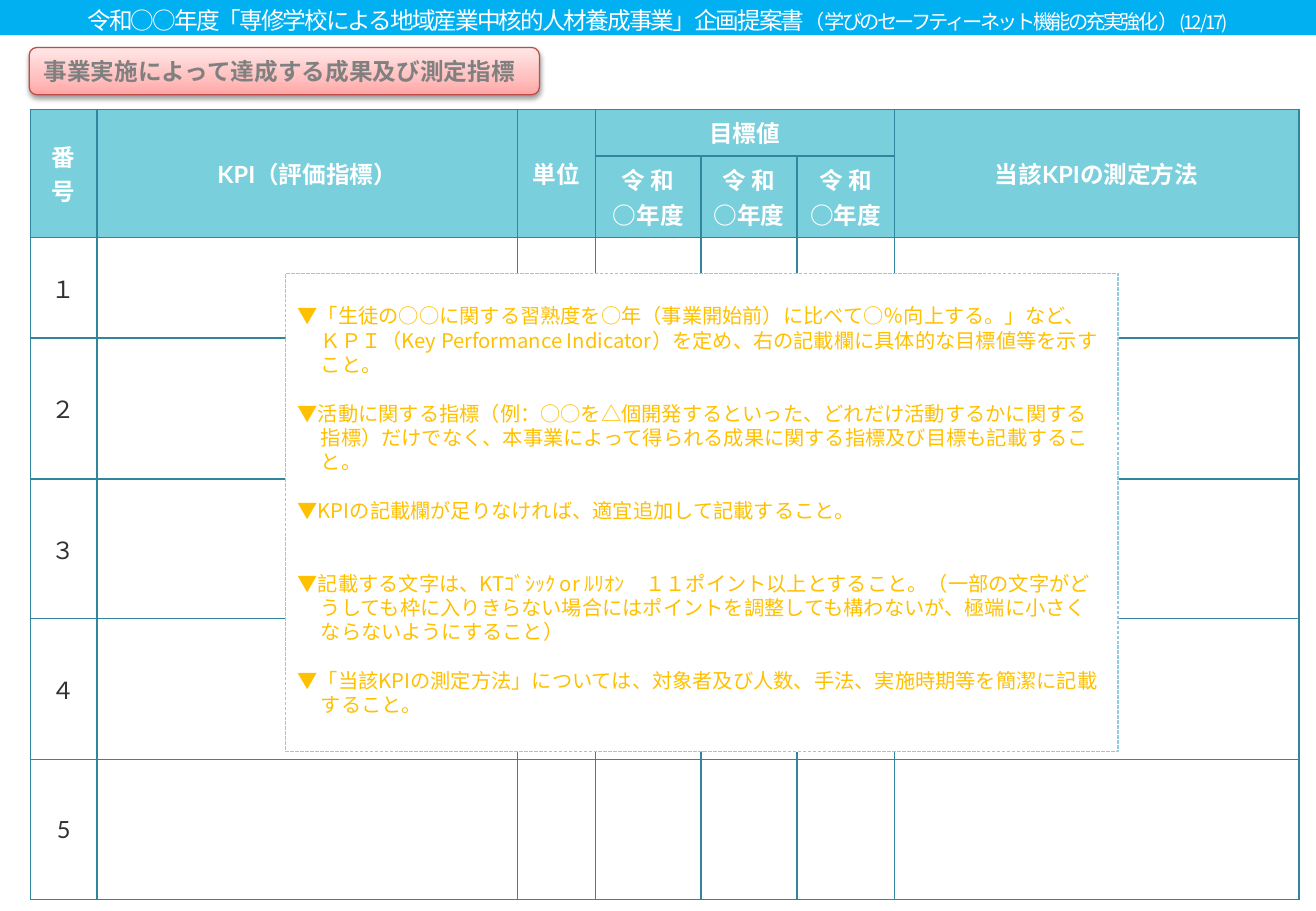
import copy
import dataclasses
import typing

import lxml.etree
import pptx
import pptx.dml.color
import pptx.enum.dml
import pptx.enum.shapes
import pptx.enum.text
import pptx.oxml.ns
import pptx.util

PX = 9144
WIDE, HIGH = 1083, 750
LATO, NOTO = "Lato", "Noto Sans CJK JP"

WHITE = pptx.dml.color.RGBColor(0xFF, 0xFF, 0xFF)
BLUE = pptx.dml.color.RGBColor(0x00, 0xB0, 0xF0)
AQUA = pptx.dml.color.RGBColor(0x79, 0xCF, 0xDB)
TEAL = pptx.dml.color.RGBColor(0x31, 0x85, 0x9C)
SKY = pptx.dml.color.RGBColor(0x93, 0xCD, 0xDD)
GOLD = pptx.dml.color.RGBColor(0xFF, 0xC0, 0x00)
INK = pptx.dml.color.RGBColor(0x32, 0x32, 0x32)
GREY = pptx.dml.color.RGBColor(0x80, 0x80, 0x80)
RED = pptx.dml.color.RGBColor(0xBF, 0x4C, 0x48)
BLACK = pptx.dml.color.RGBColor(0x00, 0x00, 0x00)
ROSE = pptx.dml.color.RGBColor(0xFF, 0xA6, 0xA5)
PINK = pptx.dml.color.RGBColor(0xFF, 0xC0, 0xBF)
PALE = pptx.dml.color.RGBColor(0xFF, 0xE7, 0xE7)

ALIGN = pptx.enum.text.PP_ALIGN
MIDDLE = pptx.enum.text.MSO_ANCHOR.MIDDLE
TOP = pptx.enum.text.MSO_ANCHOR.TOP
SHAPE = pptx.enum.shapes.MSO_SHAPE


@dataclasses.dataclass(frozen=True)
class Piece:
    text: str
    size: int
    space: int


@dataclasses.dataclass(frozen=True)
class Head:
    row: int
    col: int
    text: str
    down: int = 1
    over: int = 1
    font: str = LATO


@dataclasses.dataclass(frozen=True)
class Note:
    text: str
    gap: float = 14.4


TITLE = [
    Piece("令和○○年度「専修学校による地域産業中核的人材養成事業」企画提案書", 14, -120),
    Piece("（", 12, -120),
    Piece("学びのセーフティーネット機能の充実強化", 12, -160),
    Piece("）", 12, -120),
    Piece("(12/17)", 11, -120),
]
COLS = [55, 346, 64, 87, 79, 80, 333]
ROWS = [38, 67, 83, 116, 115, 116, 115]
HEADS = [
    Head(0, 0, "番号", down=2),
    Head(0, 1, "KPI（評価指標）", down=2),
    Head(0, 2, "単位", down=2),
    Head(0, 3, "目標値", over=3),
    Head(0, 6, "当該KPIの測定方法", down=2),
    *(Head(1, col, "令 和\n○年度", font=NOTO) for col in (3, 4, 5)),
]
MARKS = ["１", "２", "３", "４", "5"]
NOTES = [
    Note("▼「生徒の○○に関する習熟度を○年（事業開始前）に比べて○％向上する。」など、ＫＰＩ（Key Performance Indicator）を定め、右の記載欄に具体的な目標値等を示すこと。", 0),
    Note("▼活動に関する指標（例：○○を△個開発するといった、どれだけ活動するかに関する指標）だけでなく、本事業によって得られる成果に関する指標及び目標も記載すること。"),
    Note("▼KPIの記載欄が足りなければ、適宜追加して記載すること。"),
    Note("▼記載する文字は、KTｺﾞｼｯｸ or ﾙﾘｵﾝ　１１ポイント以上とすること。（一部の文字がどうしても枠に入りきらない場合にはポイントを調整しても構わないが、極端に小さくならないようにすること）", 28.8),
    Note("▼「当該KPIの測定方法」については、対象者及び人数、手法、実施時期等を簡潔に記載すること。"),
]


def px(size: int) -> pptx.util.Emu:
    return pptx.util.Emu(size * PX)


def add(base: typing.Any, tag: str, **marks: typing.Any) -> typing.Any:
    return lxml.etree.SubElement(
        base, pptx.oxml.ns.qn(tag), {key: str(mark) for key, mark in marks.items()})


def style(run: typing.Any, size: int, tint: pptx.dml.color.RGBColor,
          face: str, bold: bool = False) -> None:
    run.font.size = pptx.util.Pt(size)
    run.font.color.rgb = tint
    run.font.name = face
    run.font.bold = bold
    add(run.font._element, "a:ea", typeface=NOTO)


def place(shape: typing.Any, left: int, top: int, wide: int, high: int) -> None:
    shape.left, shape.top, shape.width, shape.height = map(px, (left, top, wide, high))


def frame(shape: typing.Any, anchor: typing.Any) -> typing.Any:
    text = shape.text_frame
    text.word_wrap = True
    text.auto_size = pptx.enum.text.MSO_AUTO_SIZE.NONE
    text.vertical_anchor = anchor
    return text


def draw_title(slide: typing.Any) -> None:
    bar = slide.shapes.add_shape(SHAPE.RECTANGLE, 0, 0, px(WIDE), px(29))
    bar.shadow.inherit = False
    bar.fill.solid()
    bar.fill.fore_color.rgb = BLUE
    bar.line.fill.background()
    title = slide.shapes.title
    place(title, 0, 0, WIDE, 33)
    para = frame(title, MIDDLE).paragraphs[0]
    para.alignment = ALIGN.CENTER
    for piece in TITLE:
        run = para.add_run()
        run.text = piece.text
        style(run, piece.size, WHITE, NOTO)
        run.font._element.set("spc", str(piece.space))
    slide.shapes._spTree.append(title._element)


def draw_label(slide: typing.Any) -> None:
    label = slide.shapes.add_shape(
        SHAPE.ROUNDED_RECTANGLE, px(24), px(39), px(420), px(39))
    label.fill.gradient()
    label.fill.gradient_angle = 90
    stops = label._element.spPr.find(".//" + pptx.oxml.ns.qn("a:gsLst"))
    stops.append(copy.deepcopy(stops[0]))
    shades = [(0, ROSE), (0.35, PINK), (1, PALE)]
    for stop, (spot, tint) in zip(label.fill.gradient_stops, shades):
        stop.position = spot
        stop.color.rgb = tint
    label.line.color.rgb = RED
    label.line.width = pptx.util.Pt(0.75)
    label.shadow.inherit = False
    glow = label._element.spPr.find(pptx.oxml.ns.qn("a:effectLst"))
    shade = add(glow, "a:outerShdw", blurRad=40000, dist=20000,
                dir=5400000, rotWithShape=0)
    add(add(shade, "a:srgbClr", val=BLACK), "a:alpha", val=38000)
    text = frame(label, MIDDLE)
    text.text = "事業実施によって達成する成果及び測定指標"
    text.paragraphs[0].alignment = ALIGN.LEFT
    style(text.paragraphs[0].runs[0], 14, GREY, LATO, True)


def edge(cell: typing.Any) -> None:
    base = cell._tc.get_or_add_tcPr()
    for spot, tag in enumerate(("a:lnL", "a:lnR", "a:lnT", "a:lnB")):
        line = add(base, tag, w=12700)
        add(add(line, "a:solidFill"), "a:srgbClr", val=TEAL)
        base.insert(spot, line)


def write(cell: typing.Any, text: str, tint: pptx.dml.color.RGBColor,
          face: str, bold: bool) -> None:
    cell.text_frame.text = text
    for para in cell.text_frame.paragraphs:
        para.alignment = ALIGN.CENTER
        style(para.runs[0], 14, tint, face, bold)


def draw_table(slide: typing.Any) -> None:
    table = slide.shapes.add_table(
        len(ROWS), len(COLS), px(25), px(90), px(sum(COLS)), px(sum(ROWS))).table
    table.first_row = table.horz_banding = False
    for col, wide in zip(table.columns, COLS):
        col.width = px(wide)
    for row, high in zip(table.rows, ROWS):
        row.height = px(high)
    for place_no, row in enumerate(table.rows):
        for cell in row.cells:
            if place_no < 2:
                cell.fill.solid()
                cell.fill.fore_color.rgb = AQUA
            else:
                cell.fill.background()
            cell.vertical_anchor = MIDDLE
            cell.margin_left = cell.margin_right = px(9)
            edge(cell)
    for head in HEADS:
        cell = table.cell(head.row, head.col)
        if head.down * head.over > 1:
            cell.merge(table.cell(head.row + head.down - 1, head.col + head.over - 1))
        write(cell, head.text, WHITE, head.font, True)
    for row, mark in enumerate(MARKS, 2):
        write(table.cell(row, 0), mark, INK, LATO, False)


def draw_notes(slide: typing.Any) -> None:
    body = slide.placeholders[1]
    place(body, 235, 225, 685, 394)
    body.fill.solid()
    body.fill.fore_color.rgb = WHITE
    body.line.color.rgb = SKY
    body.line.width = pptx.util.Pt(0.75)
    body.line.dash_style = pptx.enum.dml.MSO_LINE.SQUARE_DOT
    text = frame(body, TOP)
    text.margin_top = px(25)
    text.text = "\n".join(note.text for note in NOTES)
    for para, note in zip(text.paragraphs, NOTES):
        para.alignment = ALIGN.LEFT
        para.line_spacing = pptx.util.Pt(14.4)
        para.space_before = pptx.util.Pt(note.gap)
        base = para._p.get_or_add_pPr()
        base.set("marL", str(px(19)))
        base.set("indent", str(-px(19)))
        add(base, "a:buNone")
        style(para.runs[0], 12, GOLD, NOTO)
    slide.shapes._spTree.append(body._element)


def main() -> None:
    deck = pptx.Presentation()
    deck.slide_width, deck.slide_height = px(WIDE), px(HIGH)
    slide = deck.slides.add_slide(deck.slide_layouts[1])
    draw_table(slide)
    draw_notes(slide)
    draw_title(slide)
    draw_label(slide)
    deck.save("out.pptx")


if __name__ == "__main__":
    main()
